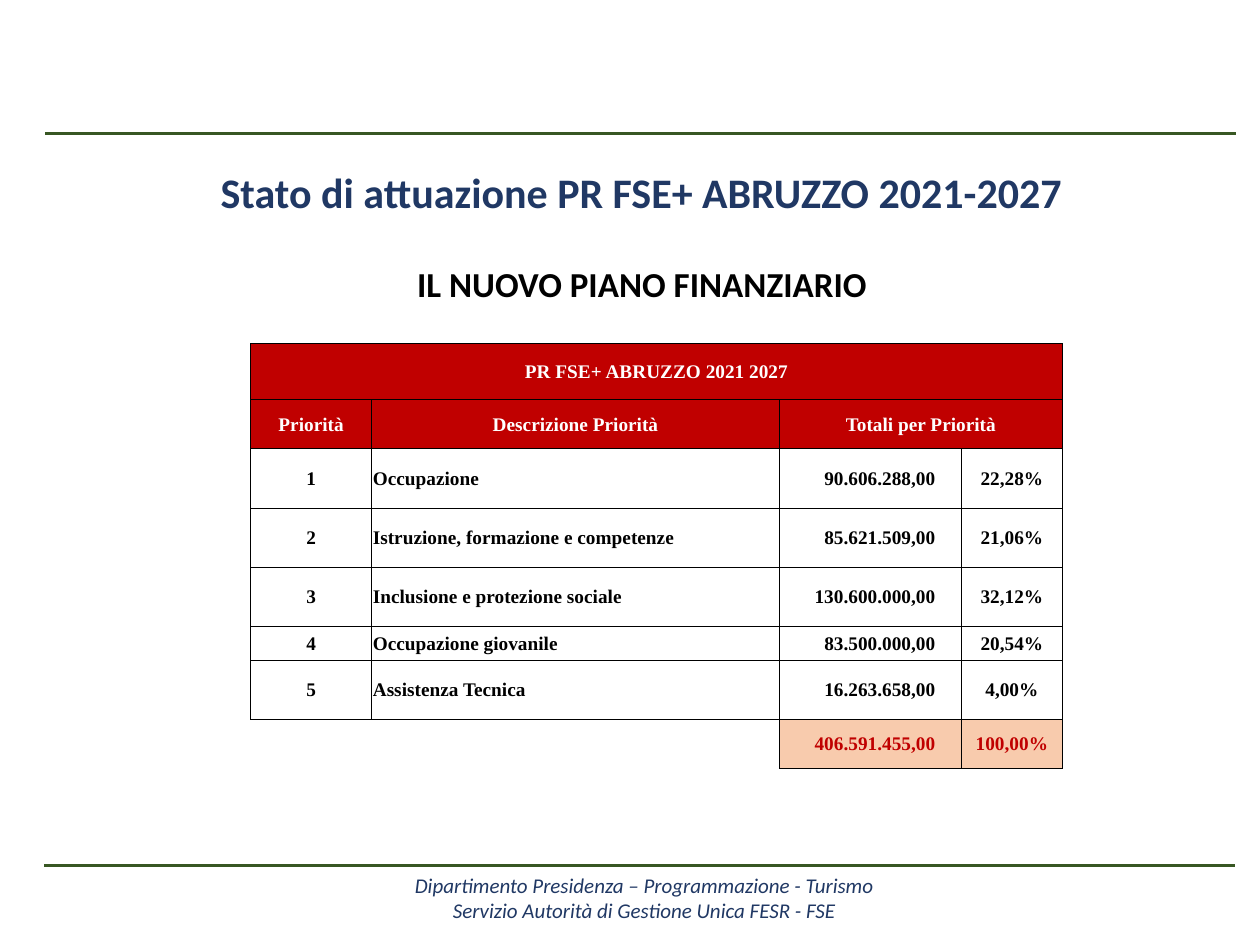
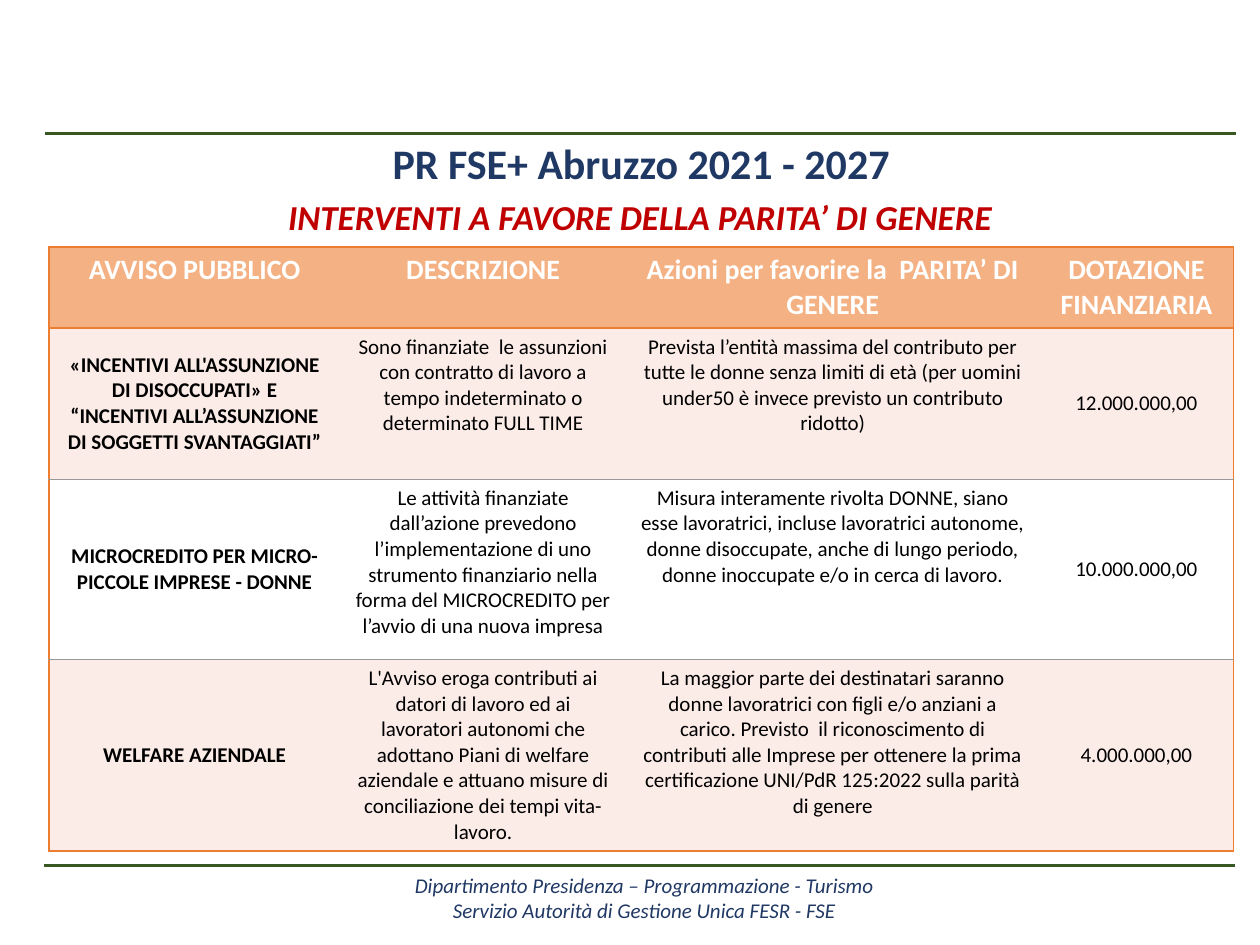
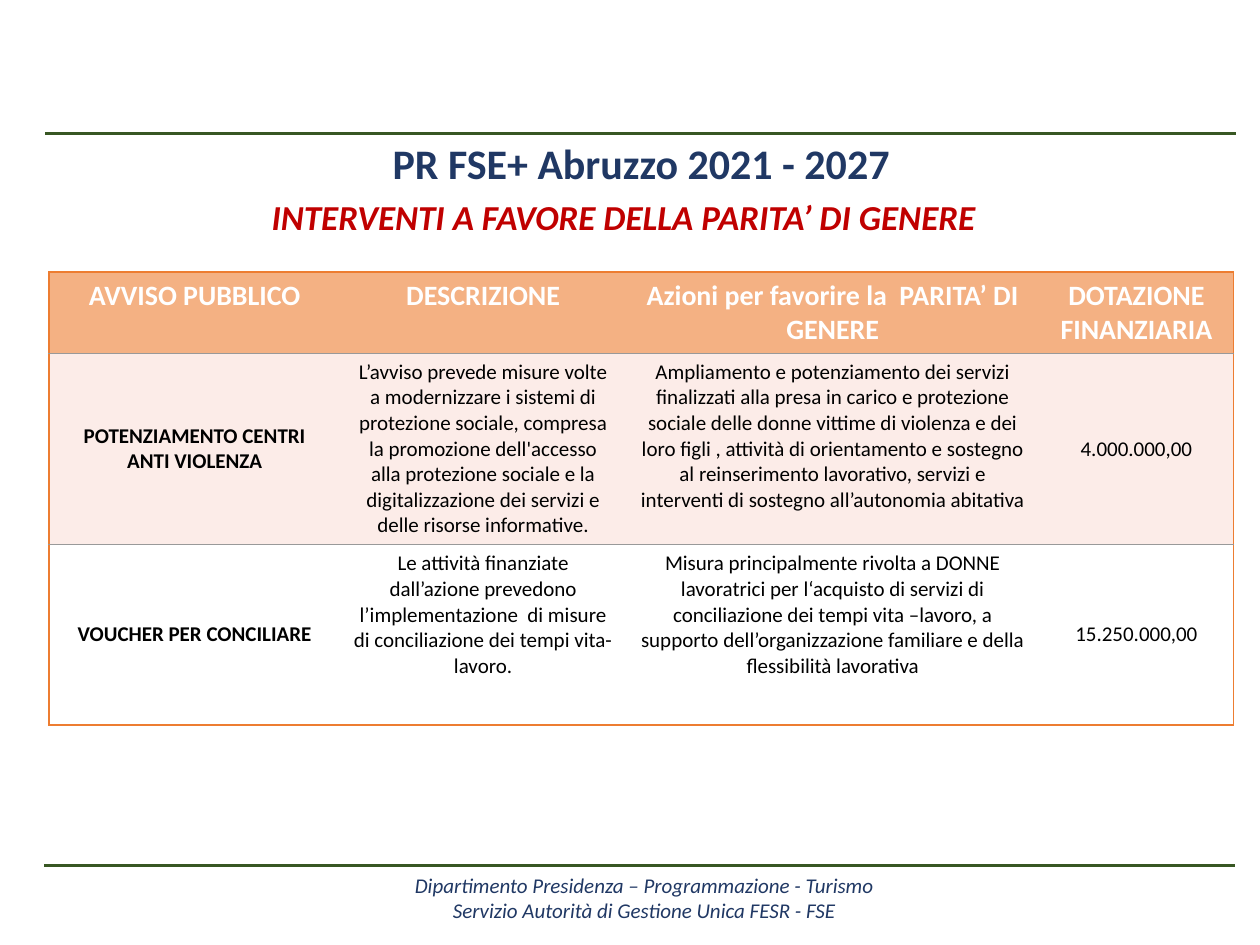
from dataclasses import astuple, dataclass

from lxml.etree import SubElement
from pptx import Presentation
from pptx.dml.color import RGBColor
from pptx.enum.shapes import MSO_CONNECTOR
from pptx.enum.text import MSO_ANCHOR, MSO_AUTO_SIZE, PP_ALIGN
from pptx.oxml.ns import qn
from pptx.util import Pt

HUES = {
    "green": "385723",
    "navy": "203864",
    "red": "C00000",
    "black": "000000",
    "white": "FFFFFF",
    "peach": "F8CBAD",
    "orange": "ED7D31",
    "sand": "F4B183",
    "rose": "FCECE8",
    "gray": "999999",
}
SANS, SERIF = "Calibri", "Times New Roman"
LEFT, MID, RIGHT = PP_ALIGN.LEFT, PP_ALIGN.CENTER, PP_ALIGN.RIGHT
TOP, CORE = MSO_ANCHOR.TOP, MSO_ANCHOR.MIDDLE
PLAIN = "{2D5ABB26-0587-4C30-8999-92F81FD0307C}"  # table style without grid


@dataclass(frozen=True)
class Box:
    left: float
    top: float
    width: float
    height: float

    def place(self) -> list:
        return [Pt(side) for side in astuple(self)]


@dataclass(frozen=True)
class Rule:
    left: float
    top: float
    width: float


@dataclass(frozen=True)
class Sum:
    goal: str
    amount: str
    share: str
    height: float = 33.8


@dataclass(frozen=True)
class Call:
    name: str
    about: str
    action: str
    funds: str
    height: float


RULES = [Rule(25.9, 76.3, 680.4), Rule(25.2, 494.6, 680.4)]
FOOT = Box(28, 498.3, 680.4, 32)
FOOT_TEXT = [
    "Dipartimento Presidenza – Programmazione - Turismo",
    "Servizio Autorità di Gestione Unica FESR - FSE",
]

SUMS = [
    Sum("Occupazione", "90.606.288,00", "22,28%"),
    Sum("Istruzione, formazione e competenze", "85.621.509,00", "21,06%"),
    Sum("Inclusione e protezione sociale", "130.600.000,00", "32,12%"),
    Sum("Occupazione giovanile", "83.500.000,00", "20,54%", 19.4),
    Sum("Assistenza Tecnica", "16.263.658,00", "4,00%"),
]

HEADS = [
    "AVVISO PUBBLICO",
    "DESCRIZIONE",
    "Azioni per favorire la  PARITA’ DI GENERE",
    "DOTAZIONE FINANZIARIA",
]
WORK = [
    Call(
        "«INCENTIVI ALL'ASSUNZIONE DI DISOCCUPATI» E “INCENTIVI ALL’ASSUNZIONE "
        "DI SOGGETTI SVANTAGGIATI”",
        "Sono finanziate  le assunzioni con contratto di lavoro a tempo "
        "indeterminato o determinato FULL TIME",
        "Prevista l’entità massima del contributo per tutte le donne senza limiti "
        "di età (per uomini under50 è invece previsto un contributo ridotto)",
        "12.000.000,00", 86.4),
    Call(
        "MICROCREDITO PER MICRO-PICCOLE IMPRESE - DONNE",
        "Le attività finanziate dall’azione prevedono l’implementazione di uno "
        "strumento finanziario nella forma del MICROCREDITO per l’avvio di una "
        "nuova impresa",
        "Misura interamente rivolta DONNE, siano esse lavoratrici, incluse "
        "lavoratrici autonome, donne disoccupate, anche di lungo periodo, donne "
        "inoccupate e/o in cerca di lavoro.",
        "10.000.000,00", 103),
    Call(
        "WELFARE AZIENDALE",
        "L'Avviso eroga contributi ai datori di lavoro ed ai lavoratori autonomi "
        "che adottano Piani di welfare aziendale e attuano misure di "
        "conciliazione dei tempi vita-lavoro.",
        "La maggior parte dei destinatari saranno donne lavoratrici con figli e/o "
        "anziani a carico. Previsto  il riconoscimento di contributi alle Imprese "
        "per ottenere la prima certificazione UNI/PdR 125:2022 sulla parità di "
        "genere",
        "4.000.000,00", 109.4),
]
CARE = [
    Call(
        "POTENZIAMENTO CENTRI ANTI VIOLENZA",
        "L’avviso prevede misure volte a modernizzare i sistemi di protezione "
        "sociale, compresa la promozione dell'accesso alla protezione sociale e "
        "la digitalizzazione dei servizi e delle risorse informative.",
        "Ampliamento e potenziamento dei servizi finalizzati alla presa in carico "
        "e protezione sociale delle donne vittime di violenza e dei loro figli , "
        "attività di orientamento e sostegno al reinserimento lavorativo, servizi "
        "e interventi di sostegno all’autonomia abitativa",
        "4.000.000,00", 109.4),
    Call(
        "VOUCHER PER CONCILIARE",
        "Le attività finanziate dall’azione prevedono l’implementazione  di misure "
        "di conciliazione dei tempi vita-lavoro.",
        "Misura principalmente rivolta a DONNE lavoratrici per l‘acquisto di "
        "servizi di conciliazione dei tempi vita –lavoro, a supporto "
        "dell’organizzazione familiare e della flessibilità lavorativa",
        "15.250.000,00", 103),
]


def tint(name: str) -> RGBColor:
    return RGBColor.from_string(HUES[name])


def write(frame, *lines: str, size: float, hue: str = "black", font: str = SANS,
          bold: bool = False, slant: bool = False, align=MID, lead: float = 1) -> None:
    """Fill a text frame, one paragraph a line, in a single format."""
    for pos, line in enumerate(lines):
        para = frame.add_paragraph() if pos else frame.paragraphs[0]
        para.alignment, para.line_spacing = align, lead
        run = para.add_run()
        run.text = line
        face = run.font
        face.name, face.size, face.bold, face.italic = font, Pt(size), bold, slant
        face.color.rgb = tint(hue)


def label(slide, box: Box, *lines: str, **style) -> None:
    frame = slide.shapes.add_textbox(*box.place()).text_frame
    frame.word_wrap = True
    if box is FOOT:
        frame.margin_top = frame.margin_bottom = 0
    write(frame, *lines, **style)


def start(deck, title: str, top: float):
    """Add a slide with its title, the two green rules and the footer."""
    slide = deck.slides.add_slide(deck.slide_layouts[5])
    head = slide.shapes.title
    head.left, head.top, head.width, head.height = Box(28.1, top, 676.8, 36).place()
    frame = head.text_frame
    frame.word_wrap, frame.auto_size = True, MSO_AUTO_SIZE.NONE
    frame.vertical_anchor = TOP
    write(frame, title, size=24, hue="navy", bold=True)
    for rule in RULES:
        line = slide.shapes.add_connector(
            MSO_CONNECTOR.STRAIGHT, Pt(rule.left), Pt(rule.top),
            Pt(rule.left + rule.width), Pt(rule.top))
        line.line.color.rgb, line.line.width = tint("green"), Pt(2)
        SubElement(line._element.spPr, qn("a:effectLst"))
    label(slide, FOOT, *FOOT_TEXT, size=12, hue="navy", slant=True)
    return slide


def grid(slide, left: float, top: float, cols: list[float], rows: list[float]):
    """Add an unstyled table with the given column widths and row heights."""
    box = Box(left, top, sum(cols), sum(rows))
    table = slide.shapes.add_table(len(rows), len(cols), *box.place()).table
    table.first_row = table.horz_banding = False
    table._tbl.tblPr.find(qn("a:tableStyleId")).text = PLAIN
    for col, width in zip(table.columns, cols):
        col.width = Pt(width)
    for row, height in zip(table.rows, rows):
        row.height = Pt(height)
    return table


def edge(cell, sides: dict[str, tuple[str, float]]) -> None:
    """Draw cell borders from a hue and a width for each of L, R, T and B."""
    props = cell._tc.get_or_add_tcPr()
    for side in "LRTB":
        if side in sides:
            hue, width = sides[side]
            line = SubElement(props, qn(f"a:ln{side}"), w=str(int(Pt(width))))
            fill = SubElement(line, qn("a:solidFill"))
            SubElement(fill, qn("a:srgbClr"), val=HUES[hue])


def shade(cell, hue: str) -> None:
    cell.fill.solid()
    cell.fill.fore_color.rgb = tint(hue)


def plan(deck) -> None:
    slide = start(deck, "Stato di attuazione PR FSE+ ABRUZZO 2021-2027", 91.4)
    label(slide, Box(23.8, 146.2, 686.2, 31.7), "IL NUOVO PIANO FINANZIARIO",
          size=20, bold=True)
    data = [
        ["PR FSE+ ABRUZZO 2021 2027", "", "", ""],
        ["Priorità", "Descrizione Priorità", "Totali per Priorità", ""],
        *([str(num), item.goal, item.amount, item.share]
          for num, item in enumerate(SUMS, 1)),
        ["", "", "406.591.455,00", "100,00%"],
    ]
    rows = [32, 28.1, *(item.height for item in SUMS), 28.1]
    table = grid(slide, 143.3, 196.4, [69.1, 233.1, 104, 57.6], rows)
    table.cell(0, 0).merge(table.cell(0, 3))
    table.cell(1, 2).merge(table.cell(1, 3))
    last = len(data) - 1
    for row, texts in enumerate(data):
        for col, text in enumerate(texts):
            cell = table.cell(row, col)
            cell.vertical_anchor = CORE
            cell.margin_left = cell.margin_right = cell.margin_top = Pt(0.7)
            cell.margin_bottom = 0
            bare = row == last and col < 2
            sides = ("T", "TR")[col] if bare else "LRTB"
            edge(cell, {side: ("black", 0.5) for side in sides})
            head, total = row < 2, row == last and not bare
            shade(cell, "red" if head else "peach" if total else "white")
            align = MID
            if not head and col == 1:
                align = LEFT
            elif not head and col == 2:
                align, cell.margin_right = RIGHT, Pt(15)
            if text:
                write(cell.text_frame, text, size=11, font=SERIF, bold=True, align=align,
                      hue="white" if head else "red" if total else "black")


def calls(deck, shift: float, top: float, items: list[Call], under: tuple) -> None:
    """Add a slide that lists calls; under is the border below the header."""
    slide = start(deck, "PR FSE+ Abruzzo 2021 - 2027", 74.9)
    label(slide, Box(shift, 110.9, 540, 43.9),
          "INTERVENTI A FAVORE DELLA PARITA’ DI GENERE",
          size=20, hue="red", bold=True, slant=True, lead=0.9)
    data = [HEADS, *([item.name, item.about, item.action, item.funds] for item in items)]
    rows = [46.3, *(item.height for item in items)]
    table = grid(slide, 28.1, top, [166.3, 163.4, 236.2, 110.9], rows)
    rim, thin = ("orange", 1), ("gray", 0.5)
    lines = [rim, under, *[thin] * (len(items) - 1), rim]
    for row, texts in enumerate(data):
        for col, text in enumerate(texts):
            cell = table.cell(row, col)
            sides = {"T": lines[row], "B": lines[row + 1]}
            if col == 0:
                sides["L"] = rim
            elif col == 3:
                sides["R"] = rim
            edge(cell, sides)
            shade(cell, "sand" if row == 0 else "rose" if row % 2 else "white")
            cell.vertical_anchor = CORE if row and col in (0, 3) else TOP
            write(cell.text_frame, text, size=12 if row else 16,
                  hue="black" if row else "white", bold=row == 0 or col == 0)


def main() -> None:
    deck = Presentation()
    deck.slide_width, deck.slide_height = Pt(720), Pt(540)
    plan(deck)
    calls(deck, 95.8, 141.1, WORK, ("orange", 1))
    calls(deck, 86.4, 155.5, CARE, ("gray", 0.5))
    deck.save("out.pptx")


if __name__ == "__main__":
    main()
